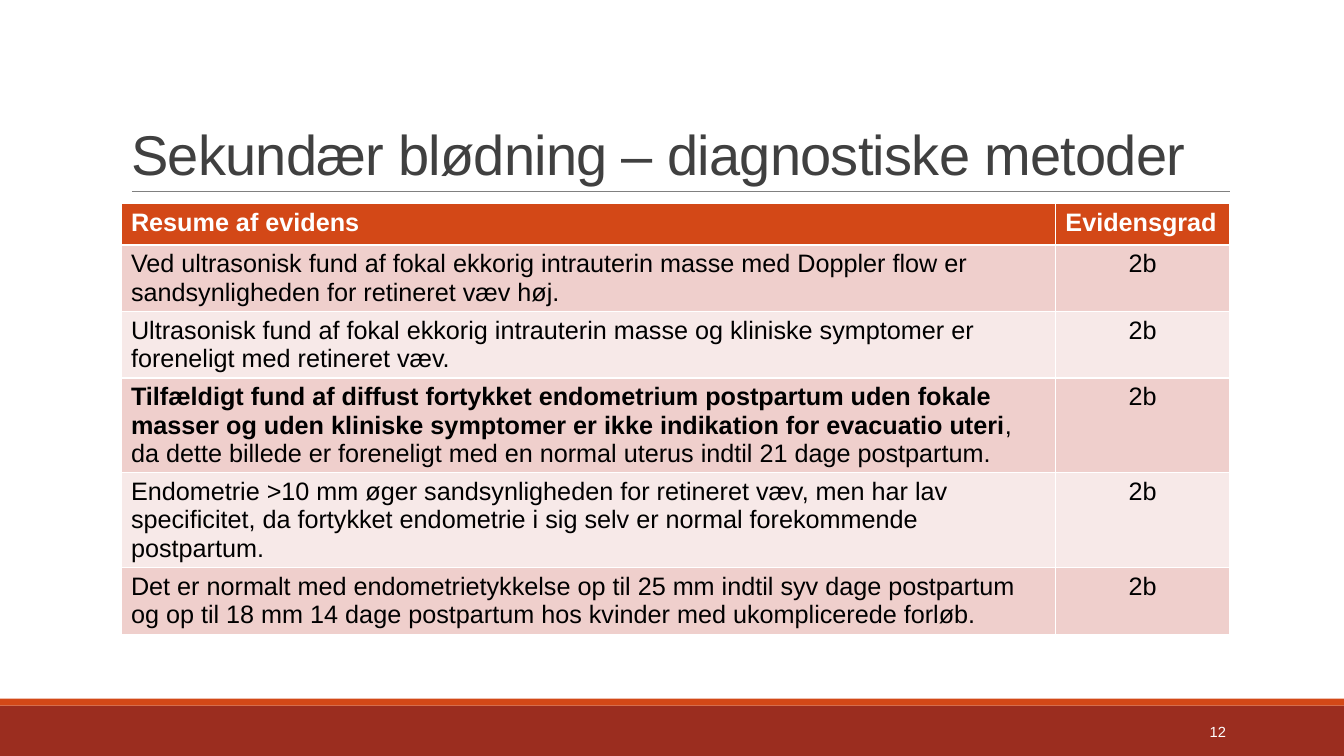
from pptx import Presentation, util as u
from pptx.dml.color import RGBColor
from pptx.enum import shapes, text
from pptx.oxml import parse_xml
from pptx.oxml.ns import nsdecls

TITLE = "Sekundær blødning – diagnostiske metoder"
PAGE = "12"
HEADER = ("Resume af evidens", "Evidensgrad")
GRADE = "2b"
FINDINGS = [
    [("Ved ultrasonisk fund af fokal ekkorig intrauterin masse med Doppler flow er "
      "sandsynligheden for retineret væv høj.", False)],
    [("Ultrasonisk fund af fokal ekkorig intrauterin masse og kliniske symptomer er "
      "foreneligt med retineret væv.", False)],
    [("Tilfældigt fund af diffust fortykket endometrium postpartum uden fokale masser "
      "og uden kliniske symptomer er ikke indikation for evacuatio uteri", True),
     (", da dette billede er foreneligt med en normal uterus indtil 21 dage "
      "postpartum.", False)],
    [("Endometrie >10 mm øger sandsynligheden for retineret væv, men har lav "
      "specificitet, da fortykket endometrie i sig selv er normal forekommende "
      "postpartum.", False)],
    [("Det er normalt med endometrietykkelse op til 25 mm indtil syv dage postpartum "
      "og op til 18 mm 14 dage postpartum hos kvinder med ukomplicerede forløb.", False)],
]
COLORS = {"bar": "9B2D1F", "accent": "D34817", "rule": "808080", "title": "404040",
          "light": "FFFFFF", "dark": "000000", "odd": "EFCFCC", "even": "F7E9E8"}

W, H = 960, 540
LEFT, TABLE_TOP, ROW_H = 86.4, 145.5, 29.5
COLS = (667.5, 124.5)
FRAME = {"margin_left": u.Pt(7.2), "margin_right": u.Pt(7.2),
         "margin_top": u.Pt(3.6), "margin_bottom": u.Pt(3.6), "word_wrap": True}


def rgb(name):
    return RGBColor.from_string(COLORS[name])


def set_all(obj, values):
    for key, value in values.items():
        setattr(obj, key, value)


def box(*lengths):
    return [u.Pt(v) for v in lengths]


def write(tf, runs, size, color, align=text.PP_ALIGN.LEFT):
    p = tf.paragraphs[0]
    p.alignment = align
    for words, bold in runs:
        r = p.add_run()
        r.text = words
        set_all(r.font, {"name": "Arial", "size": u.Pt(size), "bold": bold})
        r.font.color.rgb = rgb(color)
    return p


def add_bar(s, top, height, color):
    sp = s.shapes.add_shape(shapes.MSO_SHAPE.RECTANGLE, *box(0, top, W, height))
    sp.shadow.inherit = False
    sp.fill.solid()
    sp.fill.fore_color.rgb = rgb(color)
    sp.line.fill.background()


def add_rule(s):
    line = s.shapes.add_connector(shapes.MSO_CONNECTOR.STRAIGHT, *box(94.3, 136.8, 878.5, 136.8))
    line.line.color.rgb = rgb("rule")
    line.line.width = u.Pt(0.5)
    line._element.spPr.append(parse_xml(f"<a:effectLst {nsdecls('a')}/>"))


def add_title(s):
    sp = s.shapes.title
    set_all(sp, dict(zip(("left", "top", "width", "height"), box(LEFT, 22.5, 792, 114.3))))
    tf = sp.text_frame
    set_all(tf, {**FRAME, "vertical_anchor": text.MSO_ANCHOR.BOTTOM,
                 "auto_size": text.MSO_AUTO_SIZE.NONE})
    p = write(tf, [(TITLE, False)], 40, "title")
    p.line_spacing = 0.85
    p.runs[0].font._element.set("spc", "-50")


def add_evidence_table(s):
    rows = [[[(words, True)] for words in HEADER]]
    rows += [[finding, [(GRADE, False)]] for finding in FINDINGS]
    frame = s.shapes.add_table(len(rows), len(COLS),
                               *box(LEFT, TABLE_TOP, sum(COLS), ROW_H * len(rows)))
    table = frame.table
    for col, width in zip(table.columns, COLS):
        col.width = u.Pt(width)
    for i, row in enumerate(rows):
        fill = "accent" if i == 0 else "odd" if i % 2 else "even"
        for j, runs in enumerate(row):
            cell = table.cell(i, j)
            cell.fill.solid()
            cell.fill.fore_color.rgb = rgb(fill)
            centred = i > 0 and j == 1
            write(cell.text_frame, runs, 18, "dark" if i else "light",
                  text.PP_ALIGN.CENTER if centred else text.PP_ALIGN.LEFT)


def add_page_number(s):
    tf = s.shapes.add_textbox(*box(779.8, 508.3, 103, 28.8)).text_frame
    set_all(tf, {**FRAME, "vertical_anchor": text.MSO_ANCHOR.MIDDLE})
    write(tf, [(PAGE, False)], 10.5, "light", text.PP_ALIGN.RIGHT)


def main():
    prs = Presentation()
    prs.slide_width, prs.slide_height = box(W, H)
    s = prs.slides.add_slide(prs.slide_layouts[5])
    add_bar(s, 504, 36, "bar")
    add_bar(s, 499, 5, "accent")
    add_rule(s)
    add_title(s)
    add_evidence_table(s)
    add_page_number(s)
    prs.save("out.pptx")


if __name__ == "__main__":
    main()
